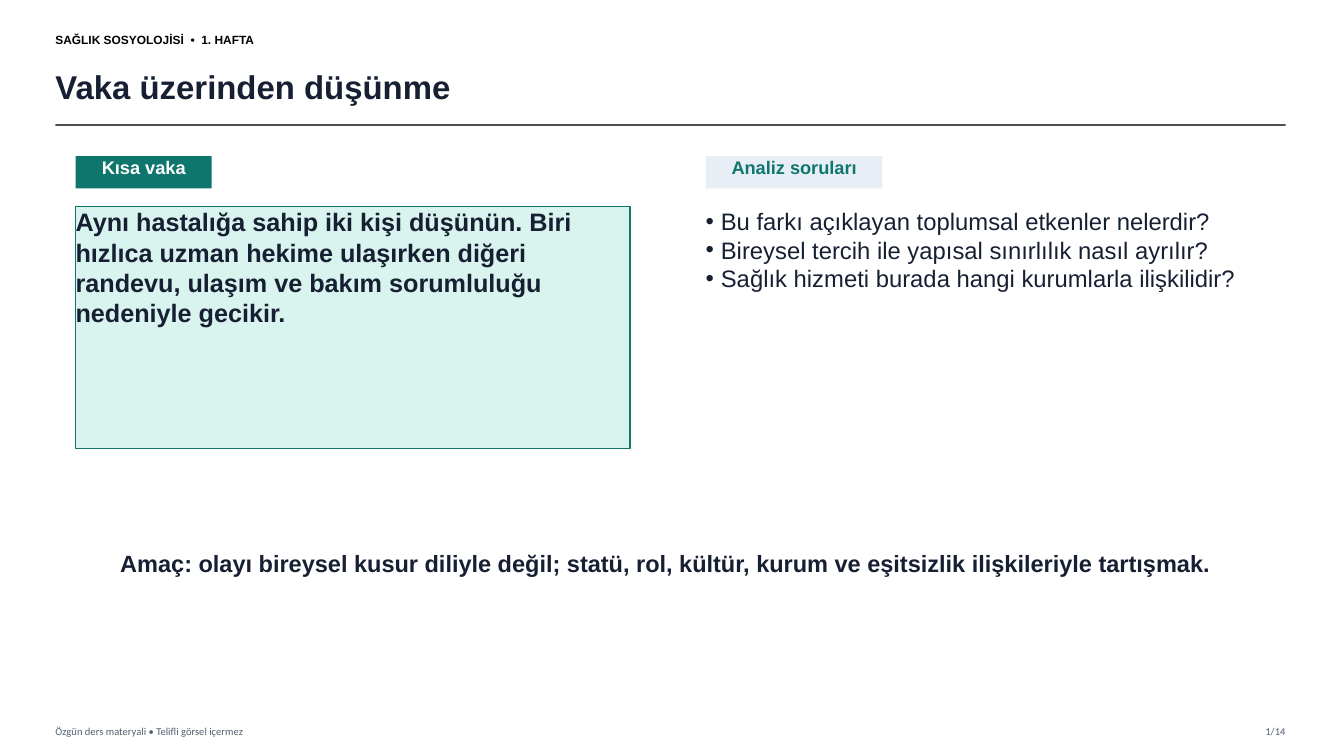
from dataclasses import dataclass
from typing import Optional

import pptx
import pptx.dml.color
import pptx.enum.shapes
import pptx.enum.text
import pptx.oxml.ns
import pptx.util
from lxml import etree

Inches = pptx.util.Inches
Pt = pptx.util.Pt
RGBColor = pptx.dml.color.RGBColor
Align = pptx.enum.text.PP_ALIGN
Anchor = pptx.enum.text.MSO_ANCHOR
qn = pptx.oxml.ns.qn

BLACK = RGBColor(0x00, 0x00, 0x00)
WHITE = RGBColor(0xFF, 0xFF, 0xFF)
INK = RGBColor(0x17, 0x20, 0x33)
RULE = RGBColor(0x33, 0x33, 0x33)
MUTED = RGBColor(0x50, 0x60, 0x70)
TEAL = RGBColor(0x0F, 0x76, 0x6E)
MINT = RGBColor(0xD9, 0xF3, 0xEE)
MIST = RGBColor(0xE8, 0xEE, 0xF5)

MARGIN, RIGHT_EDGE = 0.55, 12.75
CASE_LEFT, QUESTIONS_LEFT = 0.75, 7.0
LABEL_TOP, LABEL_HEIGHT, BODY_TOP = 1.55, 0.32, 2.05
FOOTER_TOP, FOOTER_HEIGHT = 7.14, 0.22
BULLET_INDENT = 0.15


@dataclass
class Block:
    left: float
    top: float
    width: float
    height: float
    lines: list[str]
    size: float
    color: RGBColor = INK
    bold: bool = True
    font: str = "Arial"
    align: Align = Align.LEFT
    anchor: Anchor = Anchor.TOP
    fill: Optional[RGBColor] = None
    outline: Optional[RGBColor] = None
    bulleted: bool = False


BLOCKS = [
    # Heading
    Block(MARGIN, 0.25, 3.6, 0.28, ["SAĞLIK SOSYOLOJİSİ  •  1. HAFTA"], 8.5, BLACK,
          anchor=Anchor.MIDDLE),
    Block(MARGIN, 0.58, 11.95, 0.55, ["Vaka üzerinden düşünme"], 23.5, anchor=Anchor.MIDDLE),
    # Footer
    Block(MARGIN, FOOTER_TOP, 6, FOOTER_HEIGHT,
          ["Özgün ders materyali • Telifli görsel içermez"], 7.5, MUTED,
          bold=False, font="Calibri", anchor=Anchor.MIDDLE),
    Block(RIGHT_EDGE - 0.65, FOOTER_TOP, 0.65, FOOTER_HEIGHT, ["1/14"], 7.5, MUTED,
          bold=False, font="Calibri", align=Align.RIGHT, anchor=Anchor.MIDDLE),
    # Case
    Block(CASE_LEFT, LABEL_TOP, 1.35, LABEL_HEIGHT, ["Kısa vaka"], 13, WHITE,
          align=Align.CENTER, fill=TEAL),
    Block(CASE_LEFT, BODY_TOP, 5.5, 2.4,
          ["Aynı hastalığa sahip iki kişi düşünün. Biri hızlıca uzman hekime ulaşırken "
           "diğeri randevu, ulaşım ve bakım sorumluluğu nedeniyle gecikir."],
          18, fill=MINT, outline=TEAL),
    # Questions
    Block(QUESTIONS_LEFT, LABEL_TOP, 1.75, LABEL_HEIGHT, ["Analiz soruları"], 13, TEAL,
          align=Align.CENTER, fill=MIST),
    Block(QUESTIONS_LEFT, BODY_TOP, 5.4, 2.65,
          ["Bu farkı açıklayan toplumsal etkenler nelerdir?",
           "Bireysel tercih ile yapısal sınırlılık nasıl ayrılır?",
           "Sağlık hizmeti burada hangi kurumlarla ilişkilidir?"],
          17, bold=False, bulleted=True),
    # Aim
    Block(1.05, 5.45, 11.1, 0.6,
          ["Amaç: olayı bireysel kusur diliyle değil; statü, rol, kültür, kurum ve "
           "eşitsizlik ilişkileriyle tartışmak."],
          16.8, align=Align.CENTER),
]


def add_bullet(paragraph) -> None:
    properties = paragraph._p.get_or_add_pPr()
    properties.set("marL", str(Inches(BULLET_INDENT)))
    properties.set("indent", str(-Inches(BULLET_INDENT)))
    etree.SubElement(properties, qn("a:buFont")).set("typeface", "Arial")
    etree.SubElement(properties, qn("a:buChar")).set("char", "•")


def write_text(shape, block: Block) -> None:
    frame = shape.text_frame
    frame.word_wrap = True
    frame.vertical_anchor = block.anchor
    frame.margin_left = frame.margin_right = frame.margin_top = frame.margin_bottom = 0
    for index, line in enumerate(block.lines):
        paragraph = frame.add_paragraph() if index else frame.paragraphs[0]
        paragraph.alignment = block.align
        if block.bulleted:
            add_bullet(paragraph)
        run = paragraph.add_run()
        run.text = line
        run.font.name = block.font
        run.font.size = Pt(block.size)
        run.font.bold = block.bold
        run.font.color.rgb = block.color


def add_block(slide, block: Block) -> None:
    bounds = [Inches(value) for value in (block.left, block.top, block.width, block.height)]
    if block.fill is None:
        shape = slide.shapes.add_textbox(*bounds)
    else:
        shape = slide.shapes.add_shape(pptx.enum.shapes.MSO_SHAPE.RECTANGLE, *bounds)
        shape.shadow.inherit = False
        shape.fill.solid()
        shape.fill.fore_color.rgb = block.fill
        if block.outline is None:
            shape.line.fill.background()
        else:
            shape.line.color.rgb = block.outline
            shape.line.width = Pt(1)
    write_text(shape, block)


def add_title_rule(slide) -> None:
    rule = slide.shapes.add_connector(
        pptx.enum.shapes.MSO_CONNECTOR.STRAIGHT,
        Inches(MARGIN), Inches(1.24), Inches(RIGHT_EDGE), Inches(1.24))
    rule.line.color.rgb = RULE
    rule.line.width = Pt(1.2)
    properties = rule._element.spPr
    color = properties.find(".//" + qn("a:srgbClr"))
    etree.SubElement(color, qn("a:alpha")).set("val", "85000")
    etree.SubElement(properties, qn("a:effectLst"))


def main() -> None:
    presentation = pptx.Presentation()
    presentation.slide_width = Inches(13.33)
    presentation.slide_height = Inches(7.5)
    slide = presentation.slides.add_slide(presentation.slide_layouts[6])
    slide.background.fill.solid()
    slide.background.fill.fore_color.rgb = WHITE
    add_title_rule(slide)
    for block in BLOCKS:
        add_block(slide, block)
    presentation.save("out.pptx")


if __name__ == "__main__":
    main()
